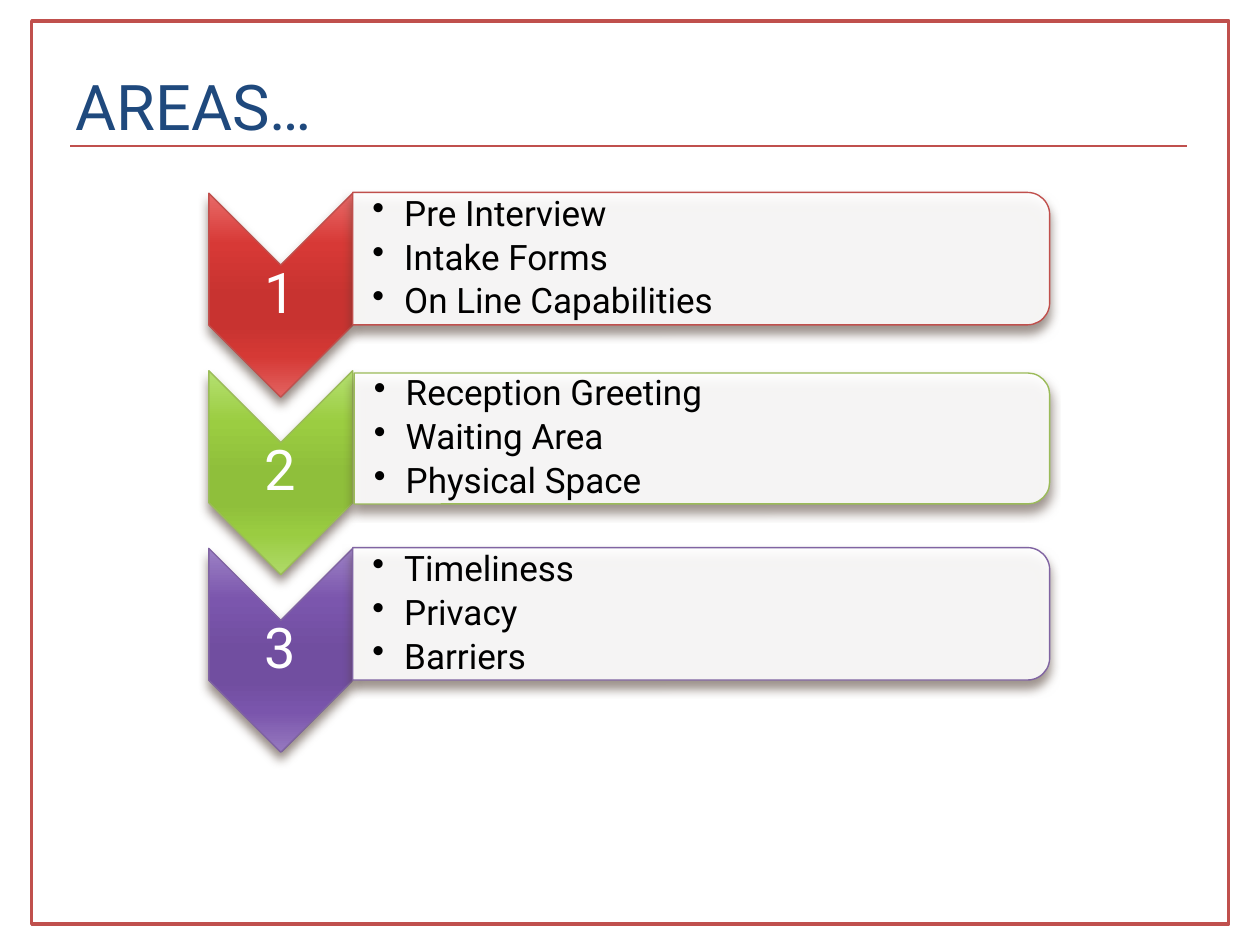
from dataclasses import dataclass

from pptx import Presentation, oxml
from pptx import util as u
from pptx.dml.color import RGBColor
from pptx.enum import shapes, text
from pptx.oxml import ns

FONT = "Roboto"
ACCENT = "C0504D"
ROW_PITCH = 3.58
FIRST_CENTER = 5.95
CHEVRON_CENTER = 5.66
CHEVRON_WIDTH, CHEVRON_HEIGHT = 2.9, 4.11
PANEL_RIGHT = 21.16
GRADIENT_STOPS = (0, 25, 50, 65, 80, 100)


@dataclass(frozen=True)
class Box:
    left: float
    top: float
    width: float
    height: float

    def lengths(self) -> list:
        return [u.Cm(n) for n in (self.left, self.top, self.width, self.height)]

    def turned(self) -> "Box":
        shift = (self.width - self.height) / 2
        return Box(self.left + shift, self.top - shift, self.height, self.width)


@dataclass(frozen=True)
class Area:
    items: tuple[str, ...]
    outline: str
    shades: tuple[str, ...]
    panel_left: float
    panel_top: float
    panel_height: float


AREAS = (
    Area(("Pre Interview", "Intake Forms", "On Line Capabilities"), ACCENT,
         ("E86A68", "D73936", "C83330", "C83330", "D53935", "E26260"),
         7.11, 3.88, 2.67),
    Area(("Reception Greeting", "Waiting Area", "Physical Space"), "9BBB59",
         ("B5E071", "9BCD41", "8FBF3B", "8FBF3B", "9ACC41", "AFDA69"),
         7.14, 7.52, 2.64),
    Area(("Timeliness", "Privacy", "Barriers"), "8064A2",
         ("9C81C5", "7B56AD", "714EA0", "714EA0", "7A55AC", "9679BF"),
         7.11, 11.04, 2.67),
)


def color(hex_code: str) -> RGBColor:
    return RGBColor.from_string(hex_code)


def element(markup: str):
    head, tail = markup.split(" ", 1)
    return oxml.parse_xml(f"{head} {ns.nsdecls('a')} {tail}")


def add_shape(slide, kind, box: Box, outline: str, weight: float):
    shape = slide.shapes.add_shape(kind, *box.lengths())
    shape.fill.background()
    shape.line.color.rgb = color(outline)
    shape.line.width = u.Pt(weight)
    shape.shadow.inherit = False
    return shape


def add_turned_shape(slide, kind, box: Box, outline: str):
    shape = add_shape(slide, kind, box.turned(), outline, 0.79)
    shape.rotation = 90
    effects = shape._element.spPr.find(ns.qn("a:effectLst"))
    effects.append(element(
        f'<a:outerShdw blurRad="{u.Pt(6)}" dist="{u.Pt(4)}" dir="5400000" '
        'rotWithShape="0"><a:srgbClr val="4E3B30"><a:alpha val="60000"/>'
        '</a:srgbClr></a:outerShdw>'))
    return shape


def shade(shape, shades: tuple[str, ...]) -> None:
    stops = "".join(
        f'<a:gs pos="{stop * 1000}"><a:srgbClr val="{tone}"/></a:gs>'
        for stop, tone in zip(GRADIENT_STOPS, shades))
    gradient = element(
        f'<a:gradFill rotWithShape="0"><a:gsLst>{stops}</a:gsLst>'
        '<a:lin ang="5400000" scaled="0"/></a:gradFill>')
    properties = shape._element.spPr
    properties.replace(properties.find(ns.qn("a:noFill")), gradient)


def add_text(slide, box: Box, lines: tuple[str, ...], *, size: float, ink: str,
             insets: tuple[float, ...] = (0.25, 0.13, 0.25, 0.13),
             align=text.PP_ALIGN.LEFT, spacing: float = 1.0,
             after: float = 0, bullets: bool = False) -> None:
    frame = slide.shapes.add_textbox(*box.lengths()).text_frame
    frame.word_wrap = True
    frame.vertical_anchor = text.MSO_ANCHOR.MIDDLE
    (frame.margin_left, frame.margin_top,
     frame.margin_right, frame.margin_bottom) = [u.Cm(n) for n in insets]
    for index, line in enumerate(lines):
        paragraph = frame.paragraphs[0] if index == 0 else frame.add_paragraph()
        if bullets:
            paragraph.level = 1
            properties = paragraph._p.get_or_add_pPr()
            properties.set("marL", str(u.Cm(0.64)))
            properties.set("indent", str(u.Cm(-0.64)))
            properties.append(element('<a:buChar char="•"/>'))
        paragraph.alignment = align
        paragraph.line_spacing = spacing
        paragraph.space_after = u.Pt(after)
        run = paragraph.add_run()
        run.text = line
        run.font.name = FONT
        run.font.size = u.Pt(size)
        run.font.color.rgb = color(ink)


def add_rule(slide, left: float, right: float, top: float) -> None:
    rule = slide.shapes.add_connector(
        shapes.MSO_CONNECTOR.STRAIGHT,
        u.Cm(left), u.Cm(top), u.Cm(right), u.Cm(top))
    rule.line.color.rgb = color(ACCENT)
    rule.line.width = u.Pt(1.5)
    rule._element.spPr.append(element("<a:effectLst />"))


def add_area(slide, number: int, area: Area) -> None:
    center = FIRST_CENTER + (number - 1) * ROW_PITCH
    left = CHEVRON_CENTER - CHEVRON_WIDTH / 2
    chevron = add_turned_shape(
        slide, shapes.MSO_SHAPE.CHEVRON,
        Box(left, center - CHEVRON_HEIGHT / 2, CHEVRON_WIDTH, CHEVRON_HEIGHT),
        area.outline)
    shade(chevron, area.shades)
    add_text(slide, Box(left, center - 0.62, CHEVRON_WIDTH, 1.24),
             (str(number),), size=32, ink="FFFFFF", insets=(0.05,) * 4,
             align=text.PP_ALIGN.CENTER, spacing=0.9)

    width = PANEL_RIGHT - area.panel_left
    panel = add_turned_shape(
        slide, shapes.MSO_SHAPE.ROUND_2_SAME_RECTANGLE,
        Box(area.panel_left, area.panel_top, width, area.panel_height),
        area.outline)
    panel.fill.solid()
    panel.fill.fore_color.rgb = color("FFFFFF")
    tone = panel._element.spPr.find(ns.qn("a:solidFill"))[0]
    tone.append(element('<a:alpha val="90000"/>'))
    add_text(slide, Box(area.panel_left, area.panel_top + 0.13,
                        width - 0.13, area.panel_height - 0.26),
             area.items, size=20, ink="000000",
             insets=(0.4, 0.03, 0.03, 0.03), spacing=0.9, after=3.5,
             bullets=True)


def main() -> None:
    deck = Presentation()
    deck.slide_width, deck.slide_height = u.Cm(25.4), u.Cm(19.05)
    slide = deck.slides.add_slide(deck.slide_layouts[6])
    add_rule(slide, 1.42, 23.93, 2.94)
    add_shape(slide, shapes.MSO_SHAPE.RECTANGLE,
              Box(0.64, 0.42, 24.13, 18.21), ACCENT, 2)
    for number, area in enumerate(AREAS, start=1):
        add_area(slide, number, area)
    add_text(slide, Box(1.27, 1.27, 17.35, 1.7), ("AREAS…",),
             size=36, ink="1F497D")
    deck.save("out.pptx")


if __name__ == "__main__":
    main()
